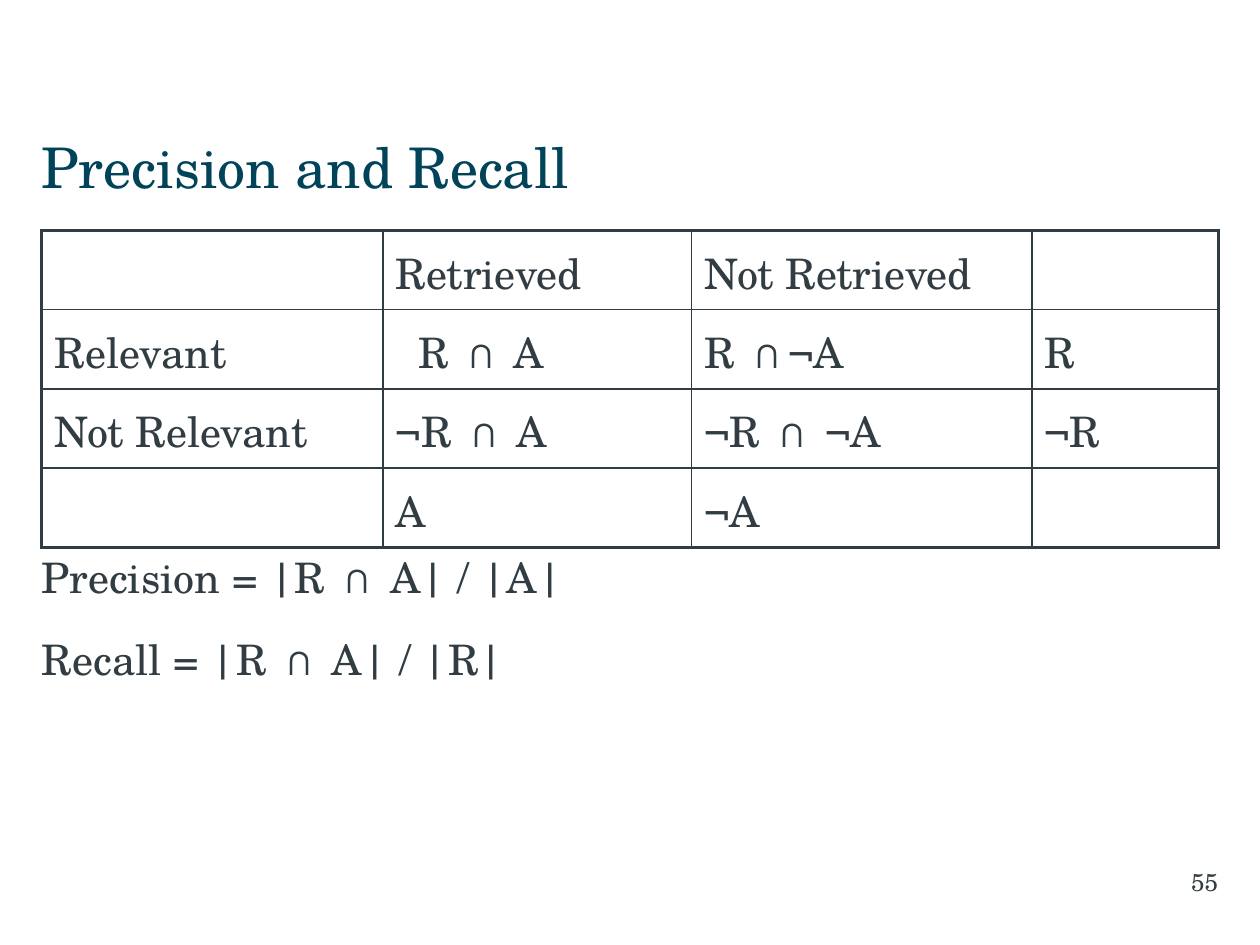
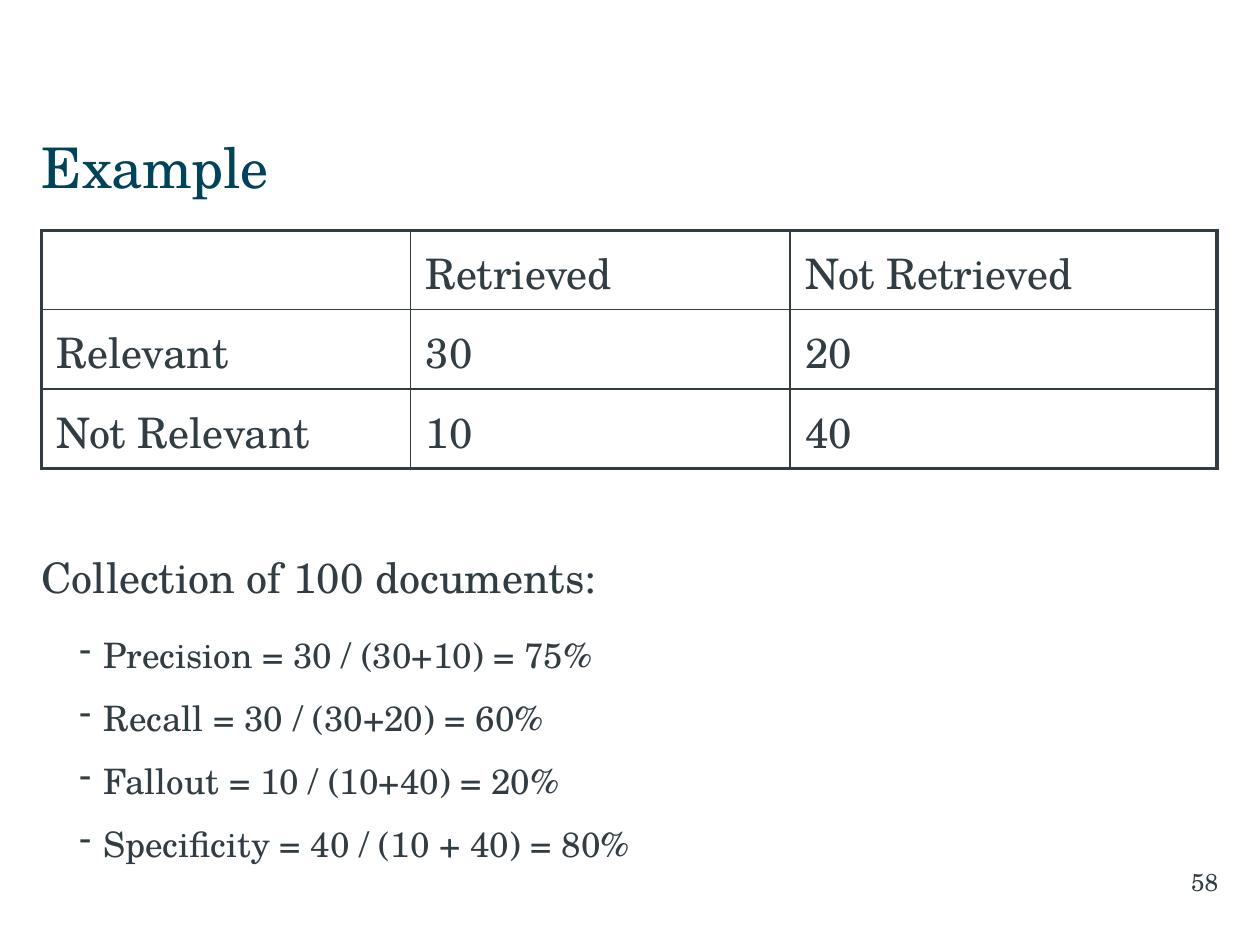
"""Build two slides on precision and recall, each with a table and its formulas."""
from dataclasses import dataclass

from lxml.etree import SubElement
from pptx import Presentation
from pptx.dml.color import RGBColor as Rgb
from pptx.enum.text import MSO_ANCHOR as Anchor, MSO_AUTO_SIZE as AutoSize, PP_ALIGN as Align
from pptx.oxml import parse_xml
from pptx.oxml.ns import nsdecls, qn
from pptx.util import Inches, Pt


@dataclass(frozen=True)
class Theme:
    font: str = "TeX Gyre Schola"
    title_color: str = "014359"
    ink: str = "323D43"
    title_size: int = 32
    body_size: int = 24
    detail_size: int = 20
    number_size: int = 14
    outer_line: float = 2.25
    inner_line: float = 1
    left: float = 0.33
    width: float = 9.33
    table_top: float = 1.83


THEME = Theme()


def write(frame, text, size=THEME.body_size, color=THEME.ink, align=Align.LEFT, after=0, bullet=None):
    """Fill the first empty paragraph of the frame, or add one, and format it."""
    para = frame.paragraphs[0] if not frame.text else frame.add_paragraph()
    para.alignment = align
    para.space_before = Pt(0)
    para.space_after = Pt(after)
    span = para.add_run()
    span.text = text
    span.font.name = THEME.font
    span.font.size = Pt(size)
    span.font.color.rgb = Rgb.from_string(color)
    if bullet:
        para.level = 1
        props = para._p.get_or_add_pPr()
        props.set("marL", str(Inches(0.49)))
        props.set("indent", str(Inches(-0.19)))
        SubElement(props, qn("a:buChar")).set("char", bullet)


def set_frame(shape, left, top, width, height, inset_left=0, inset_right=0.1):
    """Place a text shape and give its frame the shared settings."""
    shape.left, shape.top = Inches(left), Inches(top)
    shape.width, shape.height = Inches(width), Inches(height)
    frame = shape.text_frame
    frame.word_wrap = True
    frame.auto_size = AutoSize.NONE
    frame.vertical_anchor = Anchor.TOP
    frame.margin_left, frame.margin_right = Inches(inset_left), Inches(inset_right)
    frame.margin_top = frame.margin_bottom = Inches(0.05)
    return frame


SLIDES = [
    {
        "title": "Precision and Recall",
        "number": "55",
        "columns": [2.71, 2.45, 2.7, 1.48],
        "rows": [0.59, 0.59, 0.59, 0.59],
        "inset": 0.1,
        "indents": {(1, 1): 0.18},
        "cells": [
            ["", "Retrieved", "Not Retrieved", ""],
            ["Relevant", "R ∩ A", "R ∩¬A", "R"],
            ["Not Relevant", "¬R ∩ A", "¬R ∩ ¬A", "¬R"],
            ["", "A", "¬A", ""],
        ],
        "statements": ["Precision = |R ∩ A| / |A|", "Recall = |R ∩ A| / |R|"],
        "details": [],
    },
    {
        "title": "Example",
        "number": "58",
        "columns": [2.93, 3.01, 3.39],
        "rows": [0.59, 0.63, 0.59],
        "inset": 0.12,
        "indents": {},
        "cells": [
            ["", "Retrieved", "Not Retrieved"],
            ["Relevant", "30", "20"],
            ["Not Relevant", "10", "40"],
        ],
        "statements": ["Collection of 100 documents:"],
        "details": [
            "Precision = 30 / (30+10) = 75%",
            "Recall = 30 / (30+20) = 60%",
            "Fallout = 10 / (10+40) = 20%",
            "Specificity = 40 / (10 + 40) = 80%",
        ],
    },
]

deck = Presentation()
deck.slide_width, deck.slide_height = Inches(10), Inches(7.5)

for content in SLIDES:
    page = deck.slides.add_slide(deck.slide_layouts[5])
    title = set_frame(page.shapes.title, THEME.left, 1, THEME.width, 0.67)
    write(title, content["title"], size=THEME.title_size, color=THEME.title_color)

    columns, rows = content["columns"], content["rows"]
    table = page.shapes.add_table(
        len(rows), len(columns), Inches(THEME.left), Inches(THEME.table_top),
        Inches(THEME.width), Inches(sum(rows))).table
    table.first_row = table.horz_banding = False
    for column, width in zip(table.columns, columns):
        column.width = Inches(width)
    for row, height in zip(table.rows, rows):
        row.height = Inches(height)

    for r, texts in enumerate(content["cells"]):
        for c, text in enumerate(texts):
            cell = table.cell(r, c)
            cell.fill.background()
            cell.margin_left = Inches(content["inset"] + content["indents"].get((r, c), 0))
            cell.margin_right = Inches(content["inset"])
            cell.margin_top, cell.margin_bottom = Inches(0.09), Inches(0.05)
            if text:
                write(cell.text_frame, text)
            outer_edges = {"L": c == 0, "R": c == len(columns) - 1,
                           "T": r == 0, "B": r == len(rows) - 1}
            for position, (side, is_outer) in enumerate(outer_edges.items()):
                weight = Pt(THEME.outer_line if is_outer else THEME.inner_line)
                border = parse_xml(
                    f'<a:ln{side} {nsdecls("a")} w="{weight}"><a:solidFill>'
                    f'<a:srgbClr val="{THEME.ink}"/></a:solidFill></a:ln{side}>')
                cell._tc.get_or_add_tcPr().insert(position, border)

    body = set_frame(page.shapes.add_textbox(0, 0, 0, 0), THEME.left, 4.33, THEME.width, 2.33)
    for statement in content["statements"]:
        write(body, statement, after=18)
    for detail in content["details"]:
        write(body, detail, size=THEME.detail_size, after=12, bullet="-")

    number = set_frame(page.shapes.add_textbox(0, 0, 0, 0), 7.5, 6.83, 2.17, 0.5,
                       inset_left=0.1, inset_right=0)
    write(number, content["number"], size=THEME.number_size, align=Align.RIGHT)

deck.save("out.pptx")
